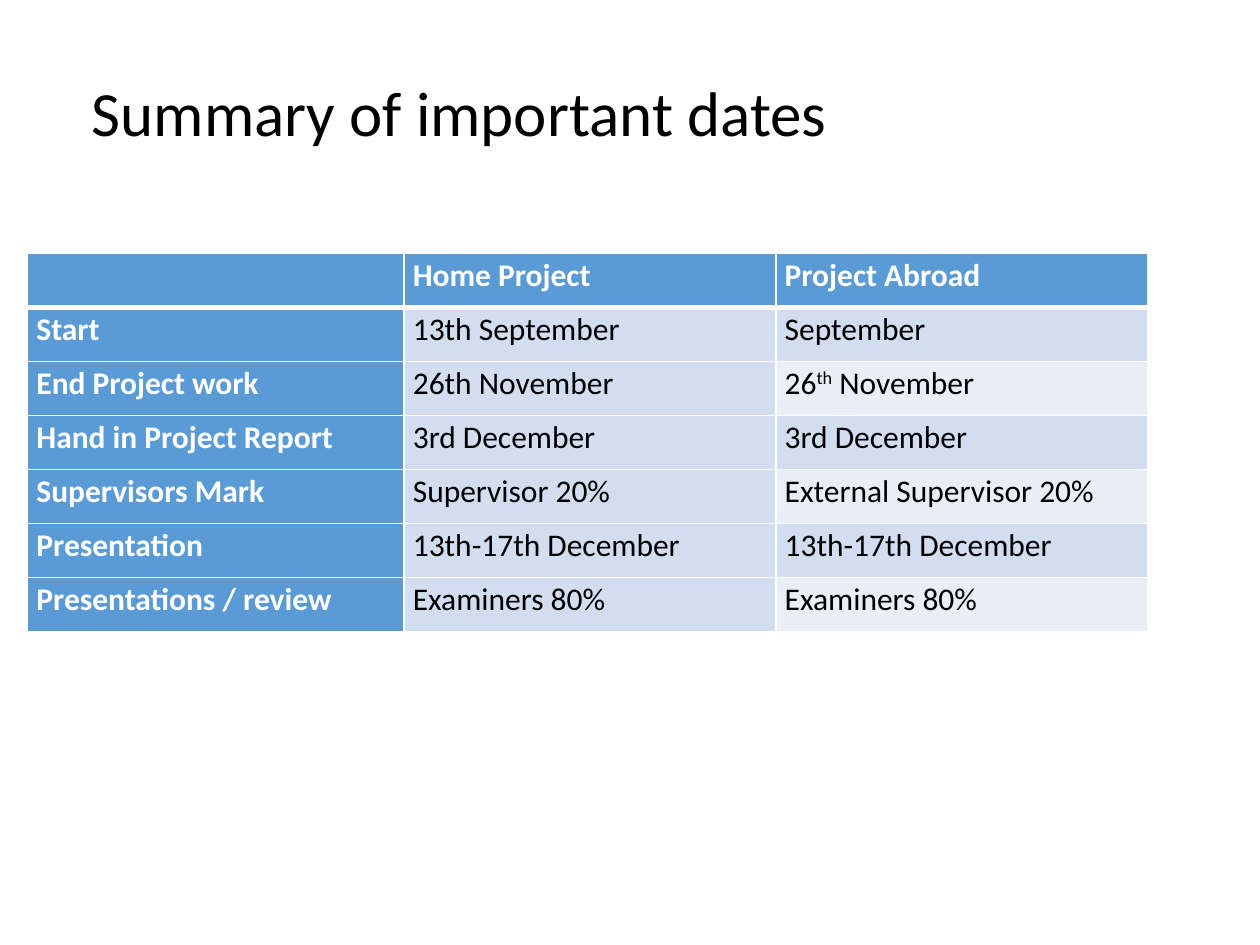
from dataclasses import dataclass

from lxml.etree import SubElement
from pptx import Presentation
from pptx.dml.color import RGBColor
from pptx.enum.text import MSO_AUTO_SIZE, PP_ALIGN
from pptx.oxml.ns import qn
from pptx.util import Pt

FONT = "Calibri"
WHITE = RGBColor(0xFF, 0xFF, 0xFF)
BLACK = RGBColor(0x00, 0x00, 0x00)
BLUE = RGBColor(0x5B, 0x9B, 0xD5)
BAND = RGBColor(0xD2, 0xDE, 0xEF)
PALE = RGBColor(0xEA, 0xEF, 0xF7)

COL_WIDTHS = (215.1, 212.5, 212.5)
ROW_HEIGHT = 30.86


@dataclass(frozen=True)
class Run:
    text: str
    superscript: bool = False


@dataclass(frozen=True)
class Row:
    label: str
    home: str
    abroad: str | tuple[Run, ...]


ROWS = (
    Row("", "Home Project", "Project Abroad"),
    Row("Start", "13th September", "September"),
    Row("End Project work", "26th November",
        (Run("26"), Run("th", True), Run(" November"))),
    Row("Hand in Project Report", "3rd December", "3rd December"),
    Row("Supervisors Mark", "Supervisor 20%", "External Supervisor 20%"),
    Row("Presentation", "13th-17th December", "13th-17th December"),
    Row("Presentations / review", "Examiners 80%", "Examiners 80%"),
)


def add_run(p, run: Run, size: float, color: RGBColor, bold: bool = False) -> None:
    r = p.add_run()
    r.text = run.text
    r.font.name = FONT
    r.font.size = Pt(size)
    r.font.bold = bold
    r.font.color.rgb = color
    if run.superscript:
        r._r.get_or_add_rPr().set("baseline", "30000")


def set_border(cell, side: str, width: float) -> None:
    ln = SubElement(cell._tc.get_or_add_tcPr(), qn(f"a:ln{side}"), w=str(Pt(width)))
    fill = SubElement(ln, qn("a:solidFill"))
    SubElement(fill, qn("a:srgbClr"), val=str(WHITE))


def fill_color(row: int, col: int) -> RGBColor:
    if row == 0 or col == 0:
        return BLUE
    return PALE if col == 2 and row % 2 == 0 else BAND


def draw_cell(cell, row: int, col: int, content: str | tuple[Run, ...]) -> None:
    cell.margin_left = cell.margin_right = Pt(5.04)
    cell.margin_top = cell.margin_bottom = Pt(0)
    for side in "LRTB":
        thick = (row, side) in ((0, "B"), (1, "T"))
        set_border(cell, side, 3 if thick else 1)
    cell.fill.solid()
    cell.fill.fore_color.rgb = fill_color(row, col)

    heading = row == 0 or col == 0
    p = cell.text_frame.paragraphs[0]
    p.alignment = PP_ALIGN.JUSTIFY
    p.line_spacing = 1.07
    p.space_after = Pt(8)
    runs = (Run(content),) if isinstance(content, str) else content
    for run in runs:
        if run.text:
            add_run(p, run, 18, WHITE if heading else BLACK, heading)


def draw_table(s, left: float, top: float) -> None:
    table = s.shapes.add_table(
        len(ROWS), len(COL_WIDTHS), Pt(left), Pt(top),
        Pt(sum(COL_WIDTHS)), Pt(ROW_HEIGHT * len(ROWS)),
    ).table
    table.first_col = True
    for column, width in zip(table.columns, COL_WIDTHS):
        column.width = Pt(width)
    for i, row in enumerate(ROWS):
        table.rows[i].height = Pt(ROW_HEIGHT)
        for j, content in enumerate((row.label, row.home, row.abroad)):
            draw_cell(table.cell(i, j), i, j, content)


def draw_title(s, text: str) -> None:
    sp = s.shapes.add_textbox(Pt(45.4), Pt(38.2), Pt(438.5), Pt(50.9))
    tf = sp.text_frame
    tf.word_wrap = False
    tf.auto_size = MSO_AUTO_SIZE.SHAPE_TO_FIT_TEXT
    add_run(tf.paragraphs[0], Run(text), 36, BLACK)


def main() -> None:
    prs = Presentation()
    prs.slide_width, prs.slide_height = Pt(720), Pt(540)
    s = prs.slides.add_slide(prs.slide_layouts[6])
    draw_table(s, 15.8, 145)
    draw_title(s, "Summary of important dates")
    prs.save("out.pptx")


if __name__ == "__main__":
    main()
